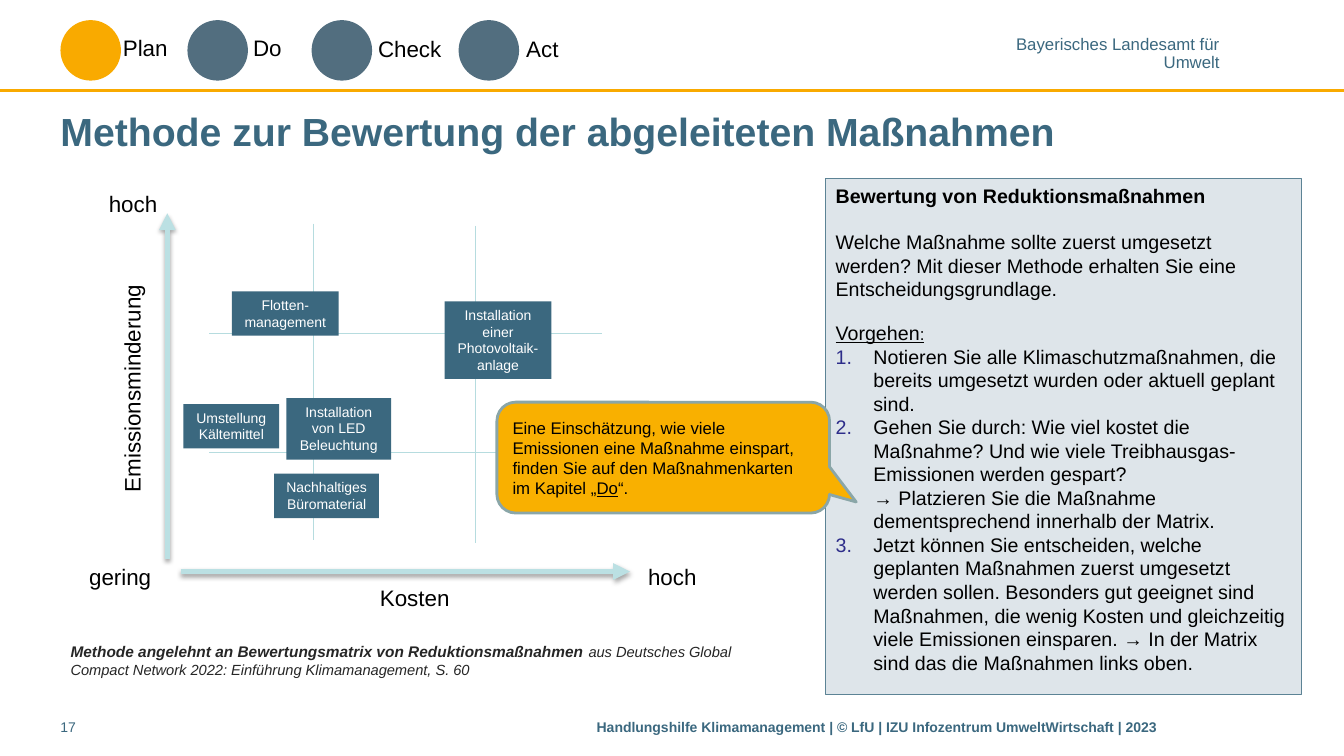
from dataclasses import dataclass

from lxml import etree
from pptx import Presentation
from pptx.dml.color import RGBColor
from pptx.enum.shapes import MSO_CONNECTOR, MSO_SHAPE
from pptx.enum.text import MSO_ANCHOR, MSO_AUTO_SIZE, PP_ALIGN
from pptx.oxml.ns import qn
from pptx.util import Inches, Pt

LEFT, CENTER, RIGHT = PP_ALIGN.LEFT, PP_ALIGN.CENTER, PP_ALIGN.RIGHT
TOP, MIDDLE = MSO_ANCHOR.TOP, MSO_ANCHOR.MIDDLE
RECT, ELLIPSE = MSO_SHAPE.RECTANGLE, MSO_SHAPE.OVAL
CALLOUT = MSO_SHAPE.ROUNDED_RECTANGULAR_CALLOUT
STRAIGHT, NO_FIT = MSO_CONNECTOR.STRAIGHT, MSO_AUTO_SIZE.NONE

COLS, ROWS = 160, 90
BLUE, SLATE, AMBER, AXIS, GRID = "3B687F", "526E7F", "F9AA00", "BBE0E3", "B6DCDF"
BLACK, WHITE = "000000", "FFFFFF"
MARGIN = 7.2
FLAT = (0, 0.6, 0, 0.6)


@dataclass
class Box:
    x: float
    y: float
    w: float
    h: float


@dataclass
class Phase:
    name: str
    circle: float
    label: Box
    color: str = SLATE


@dataclass
class Label:
    text: str
    box: Box
    rotation: int = 0


@dataclass
class Line:
    x1: float
    y1: float
    x2: float
    y2: float
    color: str = GRID
    width: float = 0.75
    arrow: bool = False


PHASES = [
    Phase("Plan", 7.2, Box(13.44, 3.5, 20, 4.44), AMBER),
    Phase("Do", 22.32, Box(28.92, 3.5, 16.3, 4.44)),
    Phase("Check", 37.1, Box(43.8, 3.6, 35.4, 4.44)),
    Phase("Act", 54.6, Box(61.44, 3.6, 35.4, 4.44)),
]
LINES = [
    Line(0, 10.8, COLS, 10.8, AMBER, 2),
    Line(19.92, 66.5, 19.92, 25.4, AXIS, 4, True),
    Line(21.5, 68.04, 75, 68.04, AXIS, 4, True),
    Line(37.3, 26.64, 37.3, 64.32),
    Line(56.64, 26.9, 56.64, 64.68),
    Line(71.64, 53.88, 24.84, 53.88),
    Line(71.64, 39.72, 24.84, 39.72),
]
AXIS_LABELS = [
    Label("gering", Box(MARGIN, 66.5, 12, 4.44)),
    Label("hoch", Box(74.16, 66.5, 9.96, 4.44)),
    Label("hoch", Box(9.96, 22.08, 9.96, 4.44)),
    Label("Emissionsminderung", Box(1.44, 44.76, 28.56, 4.44), 270),
    Label("Kosten", Box(9.6, 69, 45.12, 4.44)),
]
MEASURES = [
    Label("Installation von LED Beleuchtung", Box(34.08, 47.4, 12.48, 7.32)),
    Label("Installation einer\nPhotovoltaik-anlage", Box(52.92, 35.88, 12.72, 9.24)),
    Label("Umstellung\nKältemittel", Box(21.84, 48.12, 11.4, 5.28)),
    Label("Nachhaltiges Büromaterial", Box(32.64, 56.4, 12.48, 5.28)),
    Label("Flotten-management", Box(27.6, 34.68, 12.72, 5.28)),
]
STEPS = [
    "Notieren Sie alle Klimaschutzmaßnahmen, die bereits umgesetzt wurden oder aktuell geplant sind.",
    "Gehen Sie durch: Wie viel kostet die Maßnahme? Und wie viele Treibhausgas-Emissionen werden "
    "gespart?\n→ Platzieren Sie die Maßnahme dementsprechend innerhalb der Matrix.",
    "Jetzt können Sie entscheiden, welche geplanten Maßnahmen zuerst umgesetzt werden sollen. "
    "Besonders gut geeignet sind Maßnahmen, die wenig Kosten und gleichzeitig viele Emissionen "
    "einsparen. → In der Matrix sind das die Maßnahmen links oben.",
]

prs = Presentation()
prs.slide_width, prs.slide_height = Inches(13.33), Inches(7.5)
slide = prs.slides.add_slide(prs.slide_layouts[1])


def col(n: float) -> int:
    return round(prs.slide_width * n / COLS)


def row(n: float) -> int:
    return round(prs.slide_height * n / ROWS)


def rgb(color: str) -> RGBColor:
    return RGBColor.from_string(color)


def frame(box: Box) -> tuple[int, int, int, int]:
    return col(box.x), row(box.y), col(box.w), row(box.h)


def add_text(p, text: str, size: float = 16, color: str = BLACK, align=LEFT, before: float = 0, **font) -> None:
    p.alignment = align
    p.space_before = Pt(before)
    for i, part in enumerate(text.split("\n")):
        if i:
            p.add_line_break()
        r = p.add_run()
        r.text = part
        r.font.name, r.font.size, r.font.color.rgb = "Arial", Pt(size), rgb(color)
        for name, value in font.items():
            setattr(r.font, name, value)


def set_frame(sp, insets: tuple = (1.2, 0.6, 1.2, 0.6), anchor=TOP):
    tf = sp.text_frame
    tf.word_wrap, tf.auto_size, tf.vertical_anchor = True, NO_FIT, anchor
    left, top, right, bottom = insets
    tf.margin_left, tf.margin_right = col(left), col(right)
    tf.margin_top, tf.margin_bottom = row(top), row(bottom)
    return tf


def add_box(box: Box, insets: tuple = (1.2, 0.6, 1.2, 0.6)):
    sp = slide.shapes.add_textbox(*frame(box))
    set_frame(sp, insets)
    return sp


def paint(sp, fill: str, line: str = "", width: float = 1) -> None:
    sp.fill.solid()
    sp.fill.fore_color.rgb = rgb(fill)
    if line:
        sp.line.color.rgb, sp.line.width = rgb(line), Pt(width)
    else:
        sp.line.fill.background()


def add_shape(kind, box: Box, fill: str, line: str = "", width: float = 1):
    sp = slide.shapes.add_shape(kind, *frame(box))
    sp.shadow.inherit = False
    paint(sp, fill, line, width)
    return sp


def add_line(line: Line) -> None:
    cx = slide.shapes.add_connector(STRAIGHT, col(line.x1), row(line.y1), col(line.x2), row(line.y2))
    cx.line.color.rgb, cx.line.width = rgb(line.color), Pt(line.width)
    effects = etree.SubElement(cx._element.spPr, qn("a:effectLst"))
    if line.arrow:
        etree.SubElement(cx.line._get_or_add_ln(), qn("a:tailEnd"), type="triangle")
        shadow = etree.SubElement(effects, qn("a:outerShdw"), blurRad="39400", dist="22900", dir="5400000")
        tint = etree.SubElement(shadow, qn("a:srgbClr"), val=BLACK)
        etree.SubElement(tint, qn("a:alpha"), val="35000")


def set_bullet(p, numbered: bool) -> None:
    indent = col(4.5) if numbered else 0
    pPr = p._p.get_or_add_pPr()
    pPr.set("marL", str(indent))
    pPr.set("indent", str(-indent))
    if numbered:
        etree.SubElement(etree.SubElement(pPr, qn("a:buClr")), qn("a:srgbClr"), val="2D2D8A")
        etree.SubElement(pPr, qn("a:buAutoNum"), type="arabicPeriod")
    else:
        etree.SubElement(pPr, qn("a:buNone"))


def add_panel() -> None:
    sp = slide.placeholders[1]
    sp.left, sp.top, sp.width, sp.height = frame(Box(98.28, 21.24, 56.64, 61.44))
    paint(sp, "DEE5EA", "5C8395")
    tf = set_frame(sp)
    heading, intro, procedure = tf.paragraphs[0], tf.add_paragraph(), tf.add_paragraph()
    for p in (heading, intro, procedure):
        set_bullet(p, False)
    add_text(heading, "Bewertung von Reduktionsmaßnahmen", 14, bold=True)
    add_text(intro, "Welche Maßnahme sollte zuerst umgesetzt werden? Mit dieser Methode erhalten Sie eine "
             "Entscheidungsgrundlage.", 14, before=16.5)
    add_text(procedure, "Vorgehen", 14, before=14.5, underline=True)
    add_text(procedure, ":", 12, before=14.5, underline=True)
    for step in STEPS:
        p = tf.add_paragraph()
        set_bullet(p, True)
        add_text(p, step, 14)


def main() -> None:
    title = slide.shapes.title
    title.left, title.top, title.width, title.height = frame(Box(MARGIN, 12.24, 147.72, 6.6))
    add_text(set_frame(title, FLAT, MIDDLE).paragraphs[0],
             "Methode zur Bewertung der abgeleiteten Maßnahmen", 28, BLUE, bold=True)
    add_panel()
    for line in LINES:
        add_line(line)
    tf = add_box(Box(120.84, 4.44, 24.36, 4.08), (0, 0, 0, 0)).text_frame
    for p, text in ((tf.paragraphs[0], "Bayerisches Landesamt für"), (tf.add_paragraph(), "Umwelt")):
        p.line_spacing = 0.85
        add_text(p, text, 12, BLUE, RIGHT)
    for phase in PHASES:
        add_shape(ELLIPSE, Box(phase.circle, 2.4, 7.2, 7.2), phase.color)
        add_text(add_box(phase.label).text_frame.paragraphs[0], phase.name)
    for label in AXIS_LABELS:
        sp = add_box(label.box)
        sp.rotation = label.rotation
        add_text(sp.text_frame.paragraphs[0], label.text, align=RIGHT)
    for measure in MEASURES:
        tf = set_frame(add_shape(RECT, measure.box, BLUE))
        add_text(tf.paragraphs[0], measure.text, 10, WHITE, CENTER)

    p = add_box(Box(MARGIN, 75.84, 82.32, 4.8)).text_frame.paragraphs[0]
    add_text(p, "Methode angelehnt an Bewertungsmatrix von Reduktionsmaßnahmen ", 11, "262626", bold=True, italic=True)
    add_text(p, "aus Deutsches Global Compact Network 2022: Einführung Klimamanagement, S. 60", 10.5, "262626",
             italic=True)

    callout = add_shape(CALLOUT, Box(59.16, 47.88, 39.6, 13.2), "F9B000", "8AA6A8", 2)
    for i, value in enumerate((0.58, 0.4, 0.17)):
        callout.adjustments[i] = value
    p = set_frame(callout, anchor=MIDDLE).paragraphs[0]
    add_text(p, "Eine Einschätzung, wie viele Emissionen eine Maßnahme einspart, finden Sie auf den "
             "Maßnahmenkarten im Kapitel „", 12)
    add_text(p, "Do", 12, underline=True)
    add_text(p, "“.", 12)

    footer = add_box(Box(71.04, 84.96, 83.88, 3.72), FLAT)
    add_text(footer.text_frame.paragraphs[0],
             "Handlungshilfe Klimamanagement | © LfU | IZU Infozentrum UmweltWirtschaft | 2023", 10, BLUE, bold=True)
    number = add_box(Box(MARGIN, 84.96, 8.4, 3.72), FLAT)
    add_text(number.text_frame.paragraphs[0], "17", 10, BLUE)
    prs.save("out.pptx")


if __name__ == "__main__":
    main()
